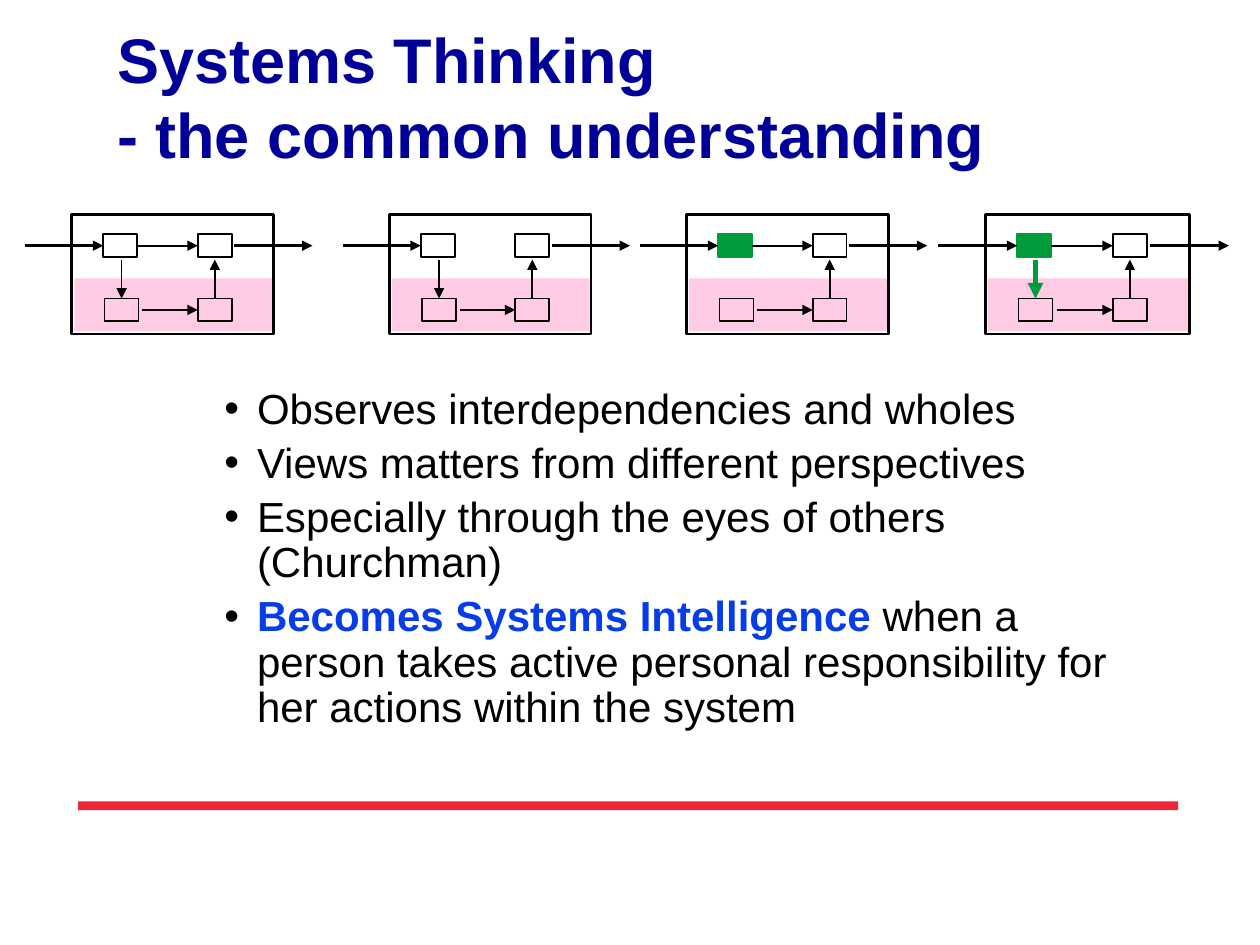
from lxml import etree
from pptx import Presentation
from pptx import util as u
from pptx.dml.color import RGBColor
from pptx.enum import shapes, text
from pptx.oxml.ns import qn

TITLE = "Systems Thinking\v- the common understanding"
BULLETS = [
    [("Observes interdependencies and wholes", False)],
    [("Views matters from different perspectives", False)],
    [("Especially through the eyes of others (Churchman)", False)],
    [("Becomes Systems Intelligence ", True),
     ("when a person takes active personal responsibility for her actions "
      "within the system", False)],
]
# Each system: left edge, width, whether the first box is active,
# whether the upper boxes are linked, and the style of the downward arrow
SYSTEMS = [
    (0.57, 1.6, False, True, "plain"),
    (3.09, 1.6, False, False, "plain"),
    (5.45, 1.6, True, True, None),
    (7.82, 1.62, True, True, "active"),
]
THEME = {
    "font": "Arial", "title_size": 36, "body_size": 24,
    "title": "000099", "body": "000000", "emphasis": "063DE8",
    "line": "000000", "active": "009B3A", "pool": "FF99CC", "rule": "ED2939",
    "thin": 1, "medium": 1.5, "thick": 3,
}
FRAME_TOP, FRAME_HEIGHT = 1.7, 0.95
BOX_WIDTH, BOX_HEIGHT = 0.27, 0.18
UPPER, LOWER = 1.86, 2.37
TOP, LEFT, BOTTOM, RIGHT = range(4)


def color(name):
    return RGBColor.from_string(THEME[name])


def add_rect(parent, left, top, width, height, fill=None, line=None, weight="thin"):
    shape = parent.add_shape(
        shapes.MSO_SHAPE.RECTANGLE,
        *(u.Inches(value) for value in (left, top, width, height)))
    shape.shadow.inherit = False
    if fill:
        shape.fill.solid()
        shape.fill.fore_color.rgb = color(fill)
    else:
        shape.fill.background()
    if line:
        shape.line.color.rgb = color(line)
        shape.line.width = u.Pt(THEME[weight])
    else:
        shape.line.fill.background()
    return shape


def add_arrow(parent, start, end, weight="thin", line="line", source=None, target=None):
    """Draw an arrow; source and target are optional (shape, side) joins."""
    arrow = parent.add_connector(
        shapes.MSO_CONNECTOR.STRAIGHT,
        *(u.Inches(value) for value in (*start, *end)))
    arrow.line.color.rgb = color(line)
    arrow.line.width = u.Pt(THEME[weight])
    etree.SubElement(arrow.line._get_or_add_ln(), qn("a:tailEnd"), type="triangle")
    etree.SubElement(arrow._element.spPr, qn("a:effectLst"))
    if source:
        arrow.begin_connect(*source)
    if target:
        arrow.end_connect(*target)


def add_system(page, left, width, active, linked, down):
    parent = page.shapes.add_group_shape().shapes
    scale = width / 1.6

    def x(offset):
        return left + offset * scale

    pool = add_rect(parent, x(0.02), 2.21, 1.57 * scale, 0.42, fill="pool")
    pool_color = pool._element.spPr.find(qn("a:solidFill"))[0]
    etree.SubElement(pool_color, qn("a:alpha"), val="50000")
    add_rect(parent, left, FRAME_TOP, width, FRAME_HEIGHT, line="line", weight="medium")

    def add_box(offset, top, fill=None):
        return add_rect(parent, x(offset), top, BOX_WIDTH, BOX_HEIGHT, fill, fill or "line")

    entry = add_box(0.25, UPPER, "active" if active else None)
    leave = add_box(1.0, UPPER)
    inner = add_box(0.26, LOWER)
    reply = add_box(1.0, LOWER)

    upper_y, lower_y = UPPER + BOX_HEIGHT / 2, LOWER + BOX_HEIGHT / 2
    below = UPPER + BOX_HEIGHT + 0.02
    inner_x, reply_x = x(0.26) + BOX_WIDTH / 2, x(1.0) + BOX_WIDTH / 2

    add_arrow(parent, (x(-0.37), upper_y), (x(0.25), upper_y), "medium",
              target=(entry, LEFT))
    if linked:
        add_arrow(parent, (x(0.52), upper_y), (x(1.0), upper_y),
                  source=(entry, RIGHT), target=(leave, LEFT))
    add_arrow(parent, (x(0.56), lower_y), (x(1.0), lower_y), target=(reply, LEFT))
    add_arrow(parent, (reply_x, LOWER), (reply_x, below), source=(reply, TOP))
    add_arrow(parent, (x(1.29), upper_y), (x(1.91), upper_y), "medium")
    if down:
        weight, line = ("thick", "active") if down == "active" else ("thin", "line")
        add_arrow(parent, (inner_x, below), (inner_x, LOWER), weight, line,
                  target=(inner, TOP))


def add_text_frame(page, left, top, width, height):
    box = page.shapes.add_textbox(
        *(u.Inches(value) for value in (left, top, width, height)))
    frame = box.text_frame
    frame.word_wrap = True
    frame.vertical_anchor = text.MSO_ANCHOR.TOP
    frame.margin_left = frame.margin_right = frame.margin_top = frame.margin_bottom = 0
    return frame


def style(font, size, name, bold):
    font.name = THEME["font"]
    font.size = u.Pt(THEME[size])
    font.color.rgb = color(name)
    font.bold = bold


def add_title(page):
    frame = add_text_frame(page, 0.93, 0.16, 7.85, 1.55)
    frame.text = TITLE
    for span in frame.paragraphs[0].runs:
        style(span.font, "title_size", "title", True)
    style(frame.paragraphs[0].font, "title_size", "title", True)


def add_bullets(page):
    frame = add_text_frame(page, 1.06, 3.08, 7.85, 3.09)
    for index, spans in enumerate(BULLETS):
        para = frame.add_paragraph() if index else frame.paragraphs[0]
        properties = para._p.get_or_add_pPr()
        properties.set("marL", str(u.Inches(0.98)))
        properties.set("indent", str(u.Inches(-0.26)))
        para.line_spacing = 0.9
        if index:
            para.space_before = u.Pt(5)
        bullet_color = etree.SubElement(properties, qn("a:buClr"))
        etree.SubElement(bullet_color, qn("a:srgbClr"), val=THEME["body"])
        etree.SubElement(properties, qn("a:buFont"), typeface=THEME["font"])
        etree.SubElement(properties, qn("a:buChar"), char="•")
        for words, emphasis in spans:
            span = para.add_run()
            span.text = words
            style(span.font, "body_size", "emphasis" if emphasis else "body", emphasis)


def main():
    deck = Presentation()
    deck.slide_width, deck.slide_height = u.Inches(10), u.Inches(7.5)
    page = deck.slides.add_slide(deck.slide_layouts[6])
    add_rect(page.shapes, 0.62, 6.36, 8.73, 0.07, fill="rule")
    add_title(page)
    add_bullets(page)
    for system in SYSTEMS:
        add_system(page, *system)
    deck.save("out.pptx")


if __name__ == "__main__":
    main()
